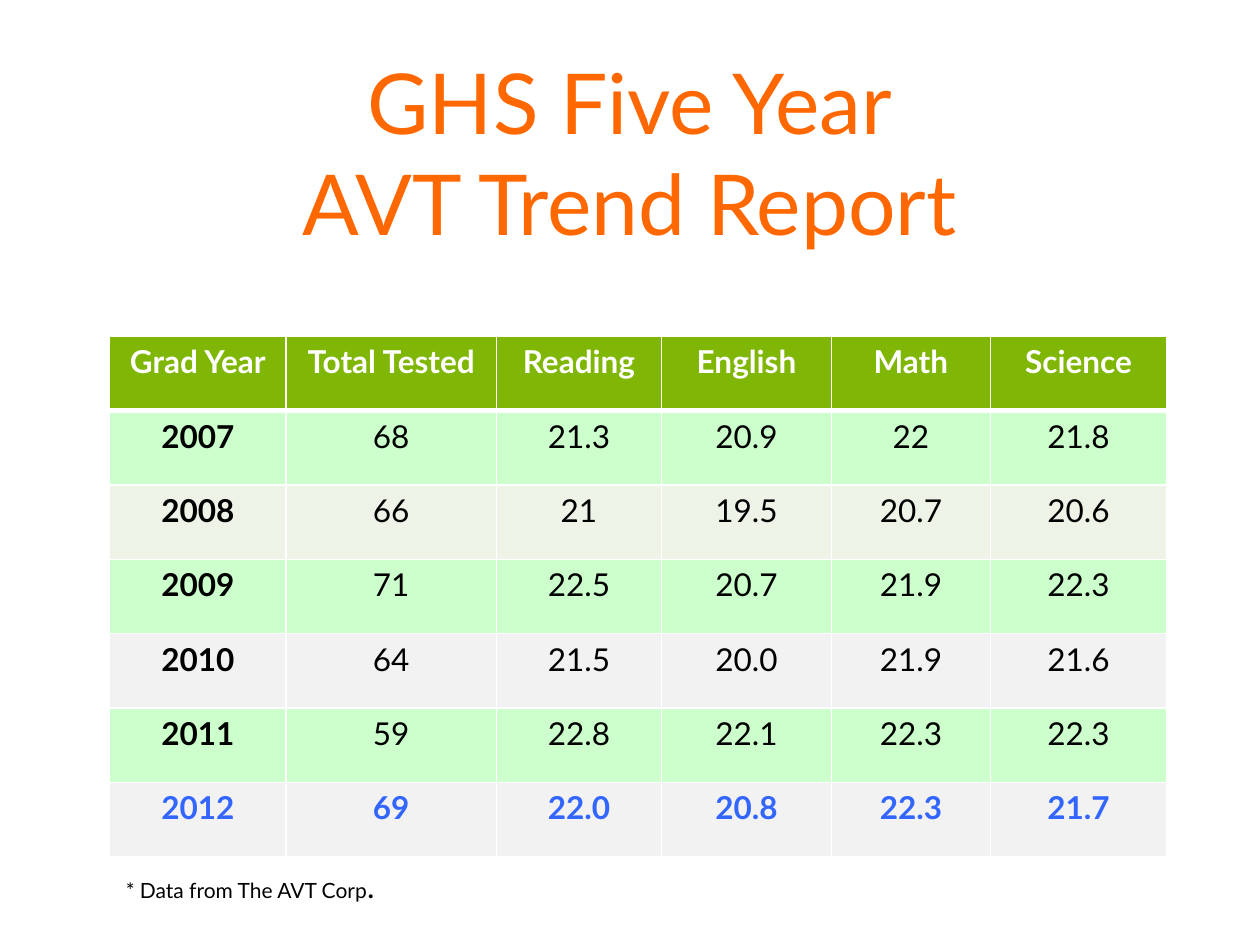
"""Build the five year test trend slide."""
from dataclasses import dataclass

from lxml.etree import SubElement
from pptx import Presentation
from pptx.dml.color import RGBColor
from pptx.enum.text import MSO_ANCHOR, PP_ALIGN
from pptx.oxml.ns import qn
from pptx.util import Inches, Pt

FONT = "Lato"
WHITE, BLACK, BLUE = "FFFFFF", "000000", "3366FF"
GREEN, MINT, SAGE, GRAY = "80B606", "CCFFCC", "EDF3E7", "F2F2F2"
WIDTHS = (1.4, 1.67, 1.31, 1.35, 1.26, 1.4)
HEIGHT = 0.59


@dataclass(frozen=True)
class Row:
    """One table row with its look."""
    cells: tuple
    fill: str
    ink: str = BLACK
    bold: bool = False
    base: float = 1


ROWS = (
    Row(("Grad Year", "Total Tested", "Reading", "English", "Math", "Science"),
        GREEN, WHITE, True, 3),
    Row(("2007", "68", "21.3", "20.9", "22", "21.8"), MINT),
    Row(("2008", "66", "21", "19.5", "20.7", "20.6"), SAGE),
    Row(("2009", "71", "22.5", "20.7", "21.9", "22.3"), MINT),
    Row(("2010", "64", "21.5", "20.0", "21.9", "21.6"), GRAY),
    Row(("2011", "59", "22.8", "22.1", "22.3", "22.3"), MINT),
    Row(("2012", "69", "22.0", "20.8", "22.3", "21.7"), GRAY, BLUE, True),
)


def color(code: str) -> RGBColor:
    """Turn a hex string into a colour."""
    return RGBColor.from_string(code)


def add_run(para, text: str, size: float, ink: str, bold: bool = False) -> None:
    """Add one styled run to a paragraph."""
    run = para.add_run()
    run.text = text
    run.font.name = FONT
    run.font.size = Pt(size)
    run.font.bold = bold
    run.font.color.rgb = color(ink)


def add_edge(cell, side: str, width: float) -> None:
    """Draw one white cell border."""
    props = cell._tc.get_or_add_tcPr()
    line = SubElement(props, qn(f"a:ln{side}"), w=str(Pt(width)))
    fill = SubElement(line, qn("a:solidFill"))
    SubElement(fill, qn("a:srgbClr"), val=WHITE)


def add_box(slide, left: float, top: float, width: float, height: float):
    """Add a text box and return its frame."""
    box = slide.shapes.add_textbox(
        Inches(left), Inches(top), Inches(width), Inches(height))
    return box.text_frame


def add_title(slide) -> None:
    """Add the two-line title."""
    frame = add_box(slide, 0.5, 0.38, 9, 1.64)
    frame.word_wrap = True
    frame.vertical_anchor = MSO_ANCHOR.MIDDLE
    para = frame.paragraphs[0]
    para.alignment = PP_ALIGN.CENTER
    add_run(para, "GHS Five Year", 48, "FF6700")
    para.add_line_break()
    add_run(para, "AVT Trend Report", 48, "FF6700")


def fill_cell(cell, text: str, row: Row, first: bool, above: float) -> None:
    """Style one cell and write its text."""
    for side, width in (("L", 1), ("R", 1), ("T", above), ("B", row.base)):
        add_edge(cell, side, width)
    cell.fill.solid()
    cell.fill.fore_color.rgb = color(row.fill)
    para = cell.text_frame.paragraphs[0]
    para.alignment = PP_ALIGN.CENTER
    add_run(para, text, 18, row.ink, row.bold or first)


def add_scores(slide) -> None:
    """Add the score table."""
    table = slide.shapes.add_table(
        len(ROWS), len(WIDTHS), Inches(0.87), Inches(2.67),
        Inches(sum(WIDTHS)), Inches(HEIGHT * len(ROWS))).table
    for col, width in zip(table.columns, WIDTHS):
        col.width = Inches(width)
    above = 1
    for i, row in enumerate(ROWS):
        table.rows[i].height = Inches(HEIGHT)
        for j, text in enumerate(row.cells):
            fill_cell(table.cell(i, j), text, row, j == 0, above)
        above = row.base


def add_note(slide) -> None:
    """Add the data credit below the table."""
    frame = add_box(slide, 0.9, 6.83, 2.27, 0.4)
    frame.word_wrap = False
    para = frame.paragraphs[0]
    add_run(para, "* Data from The AVT Corp", 12, BLACK)
    add_run(para, ".", 18, BLACK)


def main() -> None:
    """Build and save the slide."""
    deck = Presentation()
    deck.slide_width, deck.slide_height = Inches(10), Inches(7.5)
    slide = deck.slides.add_slide(deck.slide_layouts[6])
    add_title(slide)
    add_scores(slide)
    add_note(slide)
    deck.save("out.pptx")


if __name__ == "__main__":
    main()
